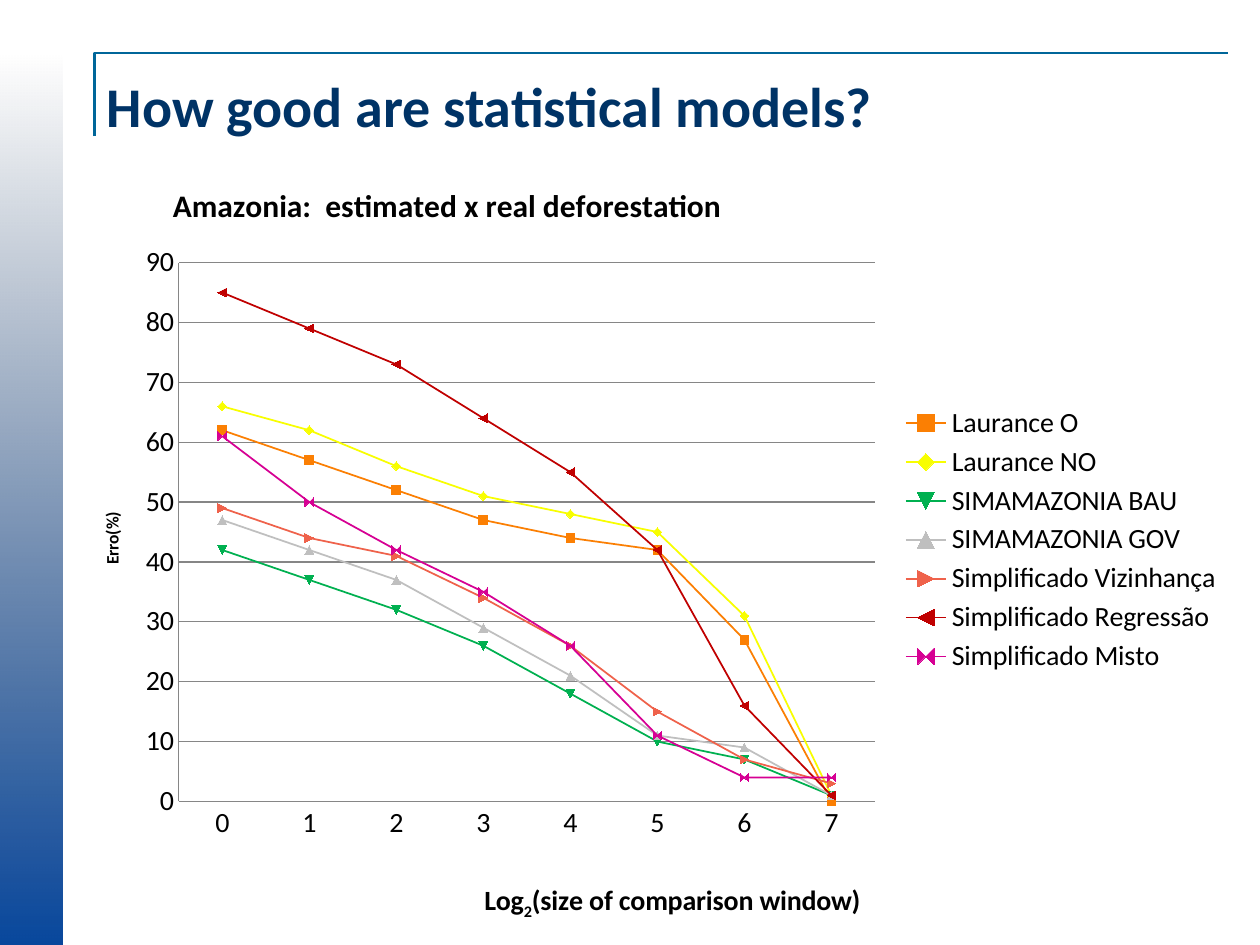
from dataclasses import dataclass

from lxml import etree
from pptx import Presentation
from pptx.chart import data as cd
from pptx.dml import color as dc
from pptx.enum import chart as ec, shapes as es, text as et
from pptx.oxml import ns
from pptx.util import Inches, Pt


@dataclass(frozen=True)
class Theme:
    font: str = "Calibri"
    head: str = "003366"
    rule: str = "006699"
    band: tuple = ("08479C", "042148")
    ink: str = "000000"
    grid: str = "868686"
    big: int = 32
    title: int = 18
    label: int = 16
    small: int = 10


THEME = Theme()
SERIES = [
    ("Laurance O", "FB7F03", (62, 57, 52, 47, 44, 42, 27, 0)),
    ("Laurance NO", "F8FE00", (66, 62, 56, 51, 48, 45, 31, 1)),
    ("SIMAMAZONIA BAU", "00B050", (42, 37, 32, 26, 18, 10, 7, 1)),
    ("SIMAMAZONIA GOV", "BFBFBF", (47, 42, 37, 29, 21, 11, 9, 1)),
    ("Simplificado Vizinhança", "EF624B", (49, 44, 41, 34, 26, 15, 7, 3)),
    ("Simplificado Regressão", "C00000", (85, 79, 73, 64, 55, 42, 16, 1)),
    ("Simplificado Misto", "D60093", (61, 50, 42, 35, 26, 11, 4, 4)),
]


def rgb(tint):
    return dc.RGBColor.from_string(tint)


def style(font, size, tint=THEME.ink, bold=False):
    font.name = THEME.font
    font.size = Pt(size)
    font.bold = bold
    font.color.rgb = rgb(tint)


def stroke(line, tint, width):
    line.color.rgb = rgb(tint)
    line.width = Pt(width)


def add_band(slide):
    band = slide.shapes.add_shape(
        es.MSO_SHAPE.RECTANGLE, Inches(-3.29), Inches(3.71), Inches(7.08), Inches(0.5)
    )
    band.rotation = 270
    band.shadow.inherit = False
    band.line.fill.background()
    band.fill.gradient()
    band.fill.gradient_angle = 0
    stops = band.fill.gradient_stops
    for stop, tint, pos in zip(stops, THEME.band, (0, 1)):
        stop.color.rgb = rgb(tint)
        stop.position = pos
    last = band.fill._xPr.findall(".//" + ns.qn("a:srgbClr"))[-1]
    etree.SubElement(last, ns.qn("a:alpha")).set("val", "0")


def add_rule(slide):
    pen = slide.shapes.build_freeform(Inches(0.75), Inches(1.08))
    pen.add_line_segments(
        [(Inches(0.75), Inches(0.42)), (Inches(9.75), Inches(0.42))], close=False
    )
    rule = pen.convert_to_shape()
    rule.shadow.inherit = False
    rule.fill.background()
    stroke(rule.line, THEME.rule, 1.5)


def add_head(slide, words):
    box = slide.shapes.add_textbox(Inches(0.75), Inches(0.42), Inches(8.92), Inches(0.83))
    frame = box.text_frame
    frame.word_wrap = True
    frame.vertical_anchor = et.MSO_ANCHOR.MIDDLE
    frame.text = words
    style(frame.paragraphs[0].runs[0].font, THEME.big, THEME.head, True)


def place(item, index, **sides):
    for old in item.findall(ns.qn("c:layout")):
        item.remove(old)
    layout = etree.Element(ns.qn("c:layout"))
    manual = etree.SubElement(layout, ns.qn("c:manualLayout"))
    if index == 0:
        etree.SubElement(manual, ns.qn("c:layoutTarget")).set("val", "inner")
    for key in ("x", "y"):
        etree.SubElement(manual, ns.qn(f"c:{key}Mode")).set("val", "edge")
    for key, val in sides.items():
        etree.SubElement(manual, ns.qn(f"c:{key}")).set("val", str(val))
    item.insert(index, layout)


def set_title(title, parts, size, x, y):
    para = title.text_frame.paragraphs[0]
    for part in parts:
        run = para.add_run()
        run.text = part
        style(run.font, size, bold=True)
    place(title._element, 1, x=x, y=y)
    return para


def set_axis(axis):
    axis.major_tick_mark = ec.XL_TICK_MARK.NONE
    axis.minor_tick_mark = ec.XL_TICK_MARK.NONE
    style(axis.tick_labels.font, THEME.label)
    stroke(axis.format.line, THEME.grid, 0.75)


def set_axes(chart):
    cat, val = chart.category_axis, chart.value_axis
    set_axis(cat)
    set_axis(val)
    val.minimum_scale, val.maximum_scale, val.major_unit = 0, 90, 10
    val.tick_labels.number_format = "0"
    val.tick_labels.number_format_is_linked = False
    val.has_major_gridlines = True
    stroke(val.major_gridlines.format.line, THEME.grid, 0.75)
    para = set_title(
        cat.axis_title, ("Log", "2", "(size of comparison window)"), THEME.label, 0.35, 0.94
    )
    para.runs[1]._r.get_or_add_rPr().set("baseline", "-25000")
    set_title(val.axis_title, ("Erro(%)",), THEME.small, 0.02, 0.46)
    val.axis_title.text_frame._txBody.bodyPr.set("rot", "-5400000")


def add_chart(slide):
    data = cd.CategoryChartData()
    data.categories = [str(n) for n in range(8)]
    for name, _, vals in SERIES:
        data.add_series(name, vals)
    chart = slide.shapes.add_chart(
        ec.XL_CHART_TYPE.LINE_MARKERS,
        Inches(0.59), Inches(1.23), Inches(9.21), Inches(6.14), data,
    ).chart
    style(chart.font, THEME.small)
    chart.has_title = True
    set_title(
        chart.chart_title, ("Amazonia:  estimated x real deforestation",), THEME.title, 0.08, 0.03
    )
    set_axes(chart)
    plot = chart.plots[0]
    plot.vary_by_categories = False
    for line, (_, tint, _) in zip(plot.series, SERIES):
        line.smooth = False
        stroke(line.format.line, tint, 1)
        line.marker.size = 5
        mark = line.marker.format
        mark.fill.solid()
        mark.fill.fore_color.rgb = rgb(tint)
        stroke(mark.line, tint, 1)
    chart.has_legend = True
    key = chart.legend
    key.position = ec.XL_LEGEND_POSITION.RIGHT
    key.include_in_layout = False
    style(key.font, THEME.label)
    place(key._element, 1, x=0.71, y=0.32, w=0.28, h=0.36)
    place(chart._chartSpace.chart.plotArea, 0, x=0.09, y=0.14, w=0.6, h=0.7)


def main():
    deck = Presentation()
    deck.slide_width, deck.slide_height = Inches(10), Inches(7.5)
    slide = deck.slides.add_slide(deck.slide_layouts[6])
    add_band(slide)
    add_rule(slide)
    add_head(slide, "How good are statistical models?")
    add_chart(slide)
    deck.save("out.pptx")


if __name__ == "__main__":
    main()
